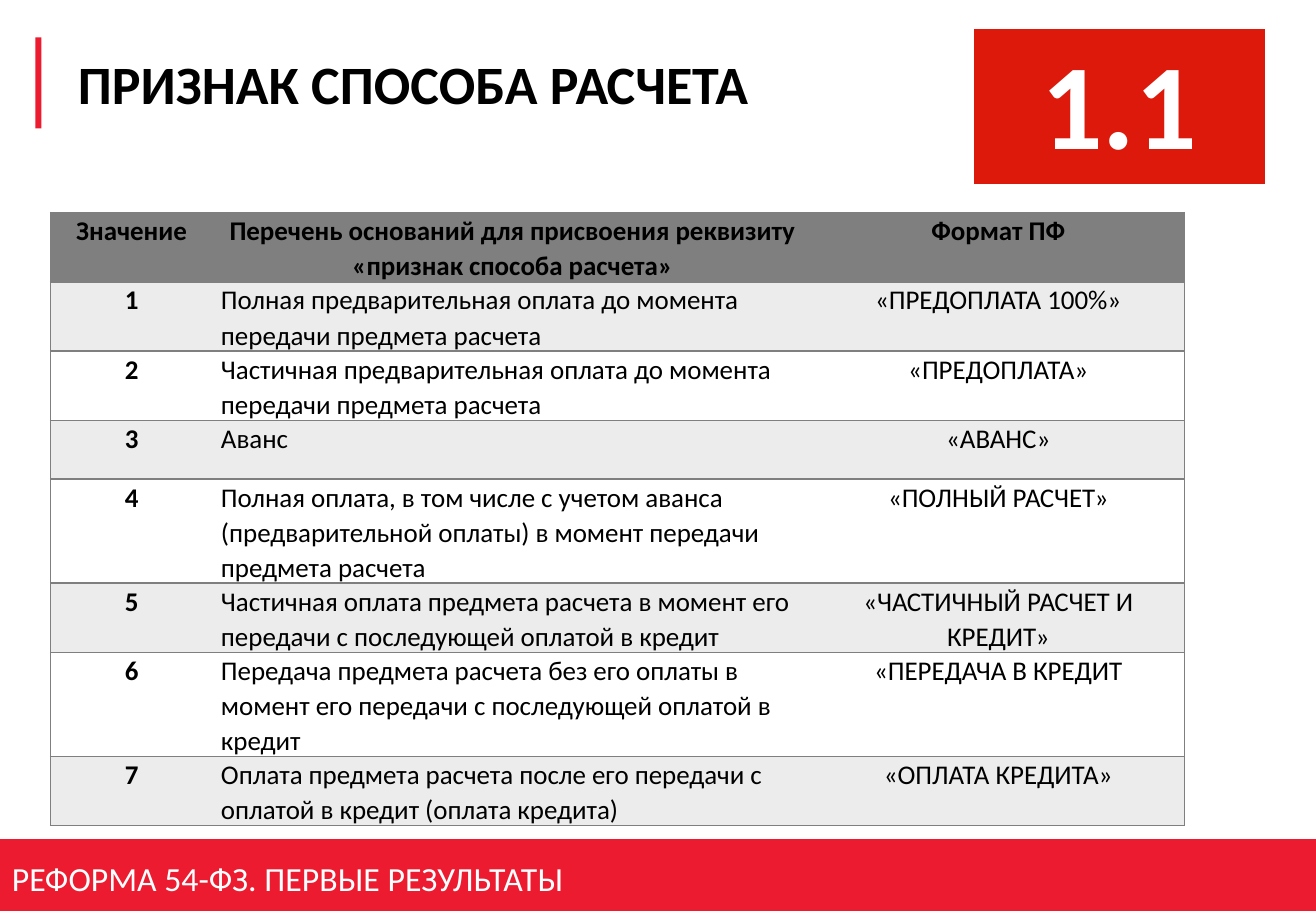
from dataclasses import dataclass

from lxml.etree import SubElement
from pptx import Presentation
from pptx.dml.color import RGBColor
from pptx.enum.shapes import MSO_SHAPE
from pptx.enum.text import MSO_ANCHOR, MSO_AUTO_SIZE, PP_ALIGN
from pptx.oxml.ns import qn
from pptx.util import Emu, Inches, Pt

FONT = "Calibri"
RED = RGBColor(0xED, 0x1B, 0x2F)
BADGE_RED = RGBColor(0xDC, 0x19, 0x0A)
GREY = RGBColor(0x7F, 0x7F, 0x7F)
PALE = RGBColor(0xEC, 0xEC, 0xEC)
WHITE = RGBColor(0xFF, 0xFF, 0xFF)
BLACK = RGBColor(0, 0, 0)

GRID_COLS, GRID_ROWS = 130, 90
UNIT = Inches(1) / 12


def grid(n: float) -> Emu:
    return Emu(round(n * UNIT))


@dataclass(frozen=True)
class Box:
    """Position and size in grid units."""
    col: float
    row: float
    cols: float
    rows: float

    def emu(self) -> tuple[Emu, ...]:
        return tuple(grid(n) for n in (self.col, self.row, self.cols, self.rows))


@dataclass(frozen=True)
class Style:
    size: float
    color: RGBColor = BLACK
    bold: bool = False
    align: PP_ALIGN = PP_ALIGN.LEFT


@dataclass(frozen=True)
class Method:
    value: str
    grounds: str
    label: str


HEADER = Method("Значение", "Перечень оснований для присвоения реквизиту «признак способа расчета»", "Формат ПФ")
METHODS = [
    Method("1", "Полная предварительная оплата до момента передачи предмета расчета", "«ПРЕДОПЛАТА 100%»"),
    Method("2", "Частичная предварительная оплата до момента передачи предмета расчета", "«ПРЕДОПЛАТА»"),
    Method("3", "Аванс", "«АВАНС»"),
    Method("4", "Полная оплата, в том числе с учетом аванса (предварительной оплаты) в момент передачи предмета расчета",
           "«ПОЛНЫЙ РАСЧЕТ»"),
    Method("5", "Частичная оплата предмета расчета в момент его передачи с последующей оплатой в кредит",
           "«ЧАСТИЧНЫЙ РАСЧЕТ И КРЕДИТ»"),
    Method("6", "Передача предмета расчета без его оплаты в момент его передачи с последующей оплатой в кредит",
           "«ПЕРЕДАЧА В КРЕДИТ"),
    Method("7", "Оплата предмета расчета после его передачи с оплатой в кредит (оплата кредита)", "«ОПЛАТА КРЕДИТА»"),
]
METHOD_COLS = (16, 59.25, 36.75)
HEADER_ROWS, METHOD_ROWS = 4.4, 5.8

TITLE_BOX = Box(6.5, 3.7, 96.4, 9)
ACCENT_BOX = Box(3.5, 3.7, 0.6, 9)
FOOTER_BOX = Box(0, 82.9, GRID_COLS, 7.8)
FOOTER_TEXT_BOX = Box(0, 84.2, 57.4, 5.3)
METHODS_BOX = Box(5, 21, sum(METHOD_COLS), 60.6)
BADGE_BOX = Box(96.1, 2.75, 28.9, 15.6)


def write(tf, text: str, style: Style):
    p = tf.paragraphs[0]
    p.alignment = style.align
    r = p.add_run()
    r.text = text
    r.font.name = FONT
    r.font.size = Pt(style.size)
    r.font.bold = style.bold
    r.font.color.rgb = style.color
    return p


def add_bar(slide, box: Box) -> None:
    sp = slide.shapes.add_shape(MSO_SHAPE.RECTANGLE, *box.emu())
    sp.shadow.inherit = False
    sp.fill.solid()
    sp.fill.fore_color.rgb = RED
    sp.line.fill.background()


def set_borders(cell, color: RGBColor, **widths: float) -> None:
    """Draw sides L, R, T, B at the given widths in points; omitted sides get no line."""
    tc_pr = cell._tc.get_or_add_tcPr()
    for side in "LRTB":
        width = widths.get(side, 0)
        ln = SubElement(tc_pr, qn(f"a:ln{side}"), w=str(Pt(width)))
        if width:
            fill = SubElement(ln, qn("a:solidFill"))
            SubElement(fill, qn("a:srgbClr"), val=str(color))
        else:
            SubElement(ln, qn("a:noFill"))


def add_plain_table(slide, rows: int, cols: int, box: Box):
    frame = slide.shapes.add_table(rows, cols, *box.emu())
    frame.table.first_row = frame.table.horz_banding = False
    return frame


def fill_cell(cell, color: RGBColor) -> None:
    cell.fill.solid()
    cell.fill.fore_color.rgb = color


def add_methods_table(slide) -> None:
    records = [HEADER, *METHODS]
    last = len(METHOD_COLS) - 1
    frame = add_plain_table(slide, len(records), len(METHOD_COLS), METHODS_BOX)
    table = frame.table
    for column, width in zip(table.columns, METHOD_COLS):
        column.width = grid(width)
    for i, record in enumerate(records):
        table.rows[i].height = grid(METHOD_ROWS if i else HEADER_ROWS)
        color = GREY if i == 0 else PALE if i % 2 else WHITE
        for j, text in enumerate((record.value, record.grounds, record.label)):
            cell = table.cell(i, j)
            cell.margin_left = cell.margin_right = Inches(0.07)
            cell.margin_top = cell.margin_bottom = 0
            set_borders(cell, GREY, L=int(j == 0), R=int(j == last), T=1, B=1)
            fill_cell(cell, color)
            align = PP_ALIGN.LEFT if i and j == 1 else PP_ALIGN.CENTER
            p = write(cell.text_frame, text, Style(16, bold=i == 0 or j == 0, align=align))
            p.line_spacing = 1.07
    frame.height = grid(METHODS_BOX.rows)


def add_badge(slide) -> None:
    cell = add_plain_table(slide, 1, 1, BADGE_BOX).table.cell(0, 0)
    set_borders(cell, WHITE, L=1, R=1, T=1, B=3)
    fill_cell(cell, BADGE_RED)
    write(cell.text_frame, "1.1", Style(72, WHITE, True, PP_ALIGN.CENTER))


def add_footer_text(slide) -> None:
    tf = slide.shapes.add_textbox(*FOOTER_TEXT_BOX.emu()).text_frame
    tf.word_wrap = False
    tf.auto_size = MSO_AUTO_SIZE.SHAPE_TO_FIT_TEXT
    write(tf, "РЕФОРМА 54-ФЗ. ПЕРВЫЕ РЕЗУЛЬТАТЫ", Style(20, WHITE))


def set_title(slide) -> None:
    title = slide.shapes.title
    title.left, title.top, title.width, title.height = TITLE_BOX.emu()
    tf = title.text_frame
    tf.auto_size = MSO_AUTO_SIZE.NONE
    tf.vertical_anchor = MSO_ANCHOR.MIDDLE
    write(tf, "ПРИЗНАК СПОСОБА РАСЧЕТА", Style(32, bold=True))


def main() -> None:
    prs = Presentation()
    prs.slide_width, prs.slide_height = grid(GRID_COLS), grid(GRID_ROWS)
    slide = prs.slides.add_slide(prs.slide_layouts.get_by_name("Title Only"))
    set_title(slide)
    for box in (ACCENT_BOX, FOOTER_BOX):
        add_bar(slide, box)
    add_footer_text(slide)
    add_methods_table(slide)
    add_badge(slide)
    prs.save("out.pptx")


if __name__ == "__main__":
    main()
